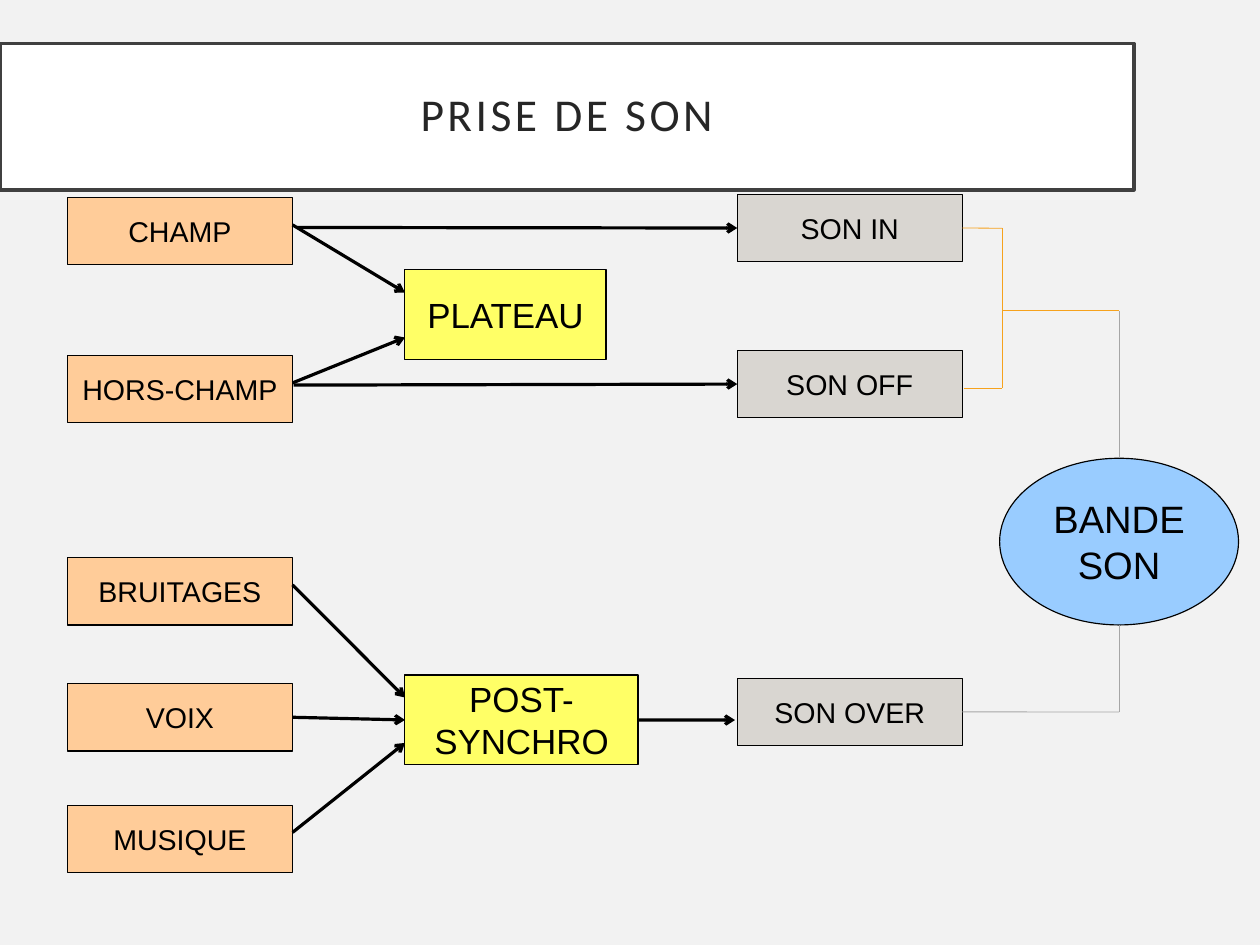
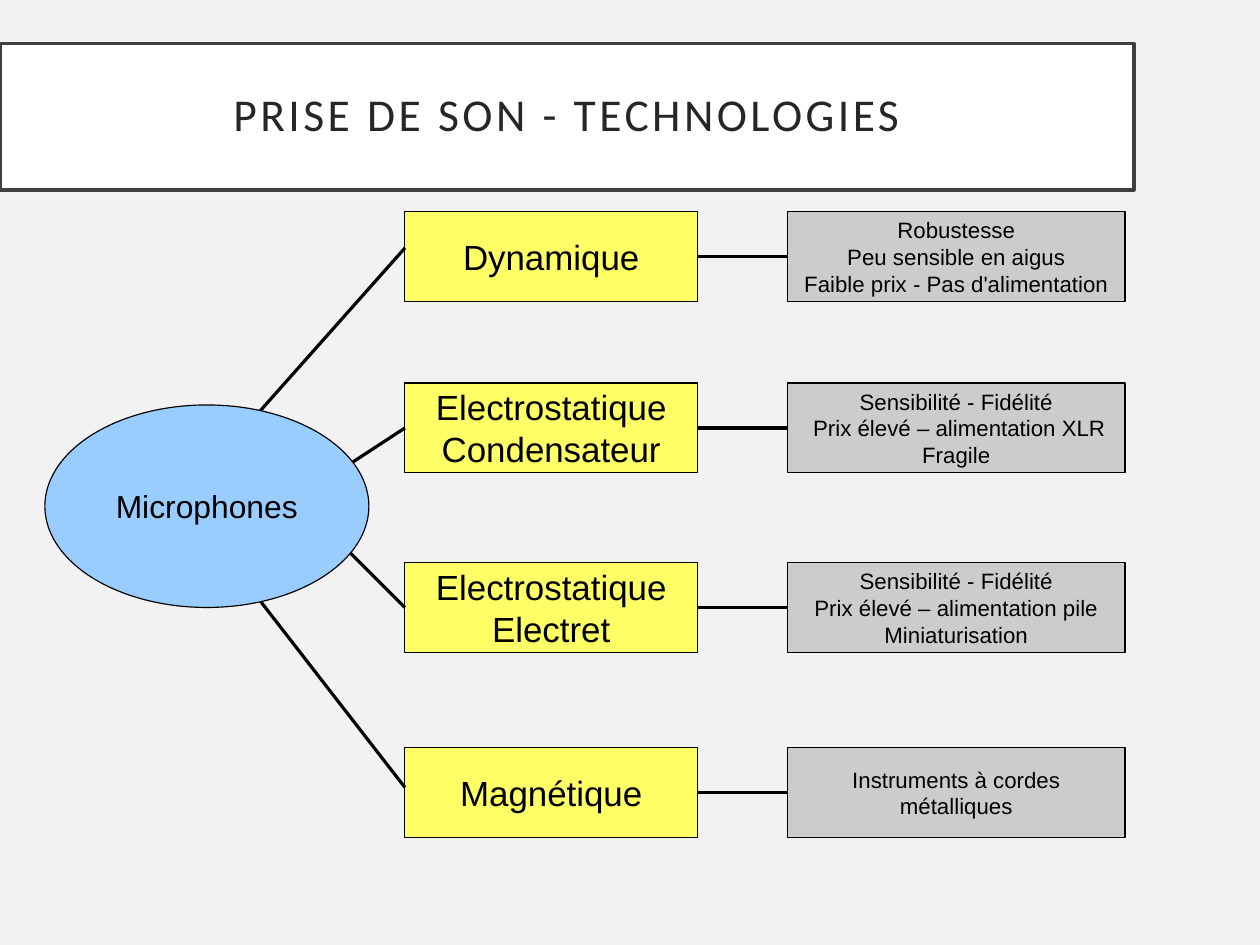
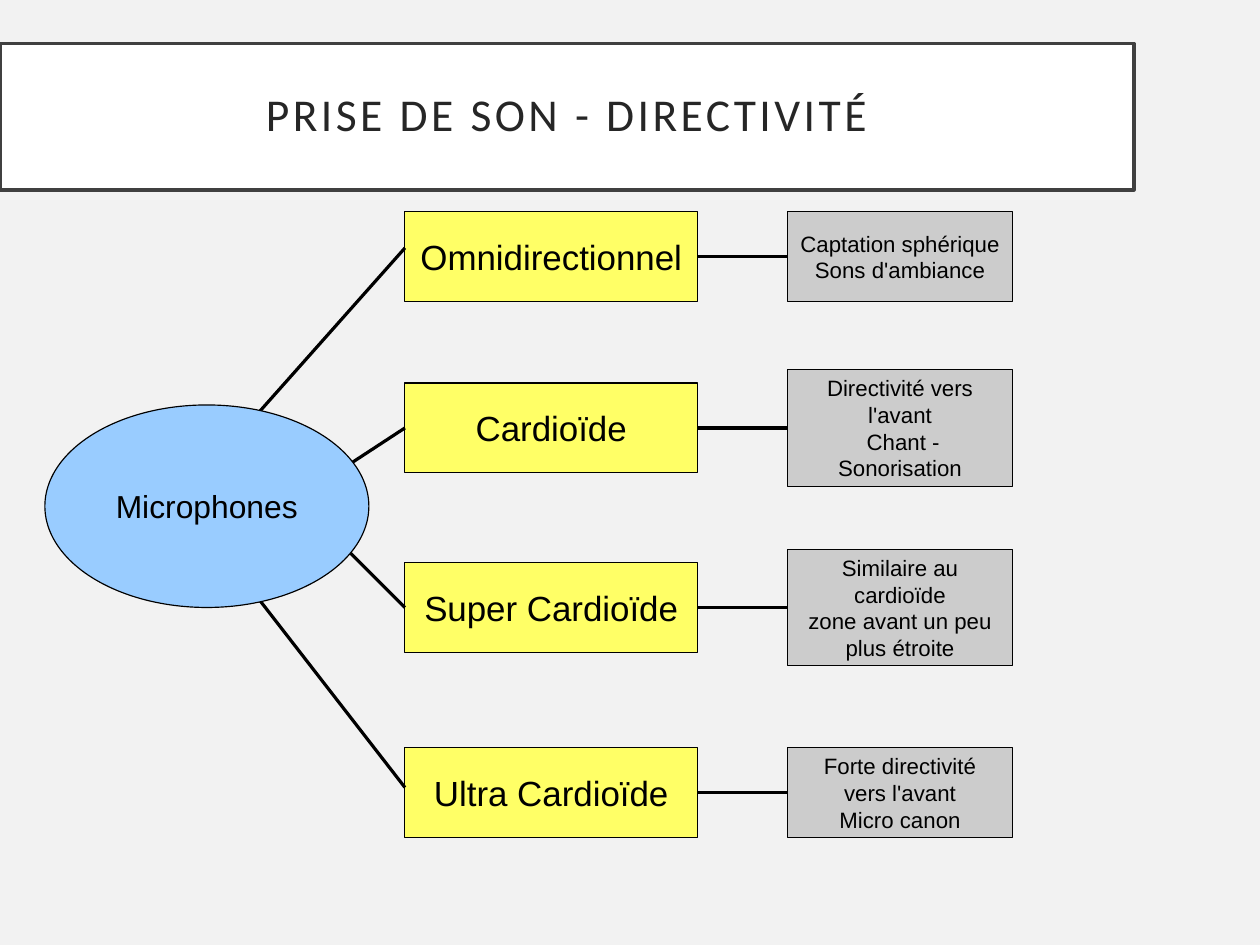
from dataclasses import dataclass
from typing import NamedTuple

from lxml import etree
from pptx import Presentation
from pptx.dml.color import RGBColor
from pptx.enum.shapes import MSO_CONNECTOR, MSO_SHAPE
from pptx.enum.text import MSO_ANCHOR, PP_ALIGN
from pptx.oxml.ns import qn
from pptx.shapes.autoshape import Shape
from pptx.slide import Slide
from pptx.util import Pt

RECT, OVAL = MSO_SHAPE.RECTANGLE, MSO_SHAPE.OVAL
STRAIGHT = MSO_CONNECTOR.STRAIGHT
CENTER, MIDDLE = PP_ALIGN.CENTER, MSO_ANCHOR.MIDDLE
LEFT, RIGHT = 1, 3

COLORS = {
    "background": "F2F2F2",
    "white": "FFFFFF",
    "title_line": "404040",
    "title_text": "262626",
    "black": "000000",
    "blue": "99CCFF",
    "orange": "FFCC99",
    "yellow": "FFFF66",
    "warm_grey": "D9D6D1",
    "grey": "CCCCCC",
    "bracket": "F6A21D",
    "link": "A6A6A6",
}


@dataclass(frozen=True)
class Style:
    fill: str
    size: float
    font: str = "Arial"
    color: str = "black"
    line: str = "black"
    line_width: float = 0
    inset_x: float = 7.2
    inset_y: float = 3.6


TITLE = Style("white", 28.7, "Calibri", "title_text", "title_line", 2.5, 14.4, 14.4)
SOURCE = Style("orange", 18)
STAGE = Style("yellow", 22)
SOUND = Style("warm_grey", 18)
DETAIL = Style("grey", 14)
SOUNDTRACK = Style("blue", 24)
MICROPHONES = Style("blue", 20)


class Frame(NamedTuple):
    x: float
    y: float
    w: float
    h: float


class Point(NamedTuple):
    x: float
    y: float


class Joint(NamedTuple):
    """Middle of one side of a shape."""
    shape: Shape
    side: int


class Row(NamedTuple):
    kind: str
    detail: str
    detail_height: float = 56.7


End = Point | Joint

COLUMN_SOURCE, COLUMN_STAGE, COLUMN_SOUND, COLUMN_DETAIL = 42.5, 255.1, 464.4, 496.1
SMALL_W, SMALL_H, STAGE_W, STAGE_H = 141.8, 42.5, 184.3, 56.7
SOURCE_RIGHT = COLUMN_SOURCE + SMALL_W
ROW_CENTERS = (161.6, 269.6, 382.7, 499.3)
FAN_STARTS = (Point(141.8, 283.7), Point(212.6, 297.4),
              Point(212.6, 340.2), Point(156.2, 368.6))
FAN_ENDS = {0: Point(COLUMN_STAGE, 156.2), 3: Point(COLUMN_STAGE, 496.1)}

TECHNOLOGIES = (
    Row("Dynamique",
        "Robustesse\nPeu sensible en aigus\nFaible prix - Pas d'alimentation"),
    Row("Electrostatique\nCondensateur",
        "Sensibilité - Fidélité\n Prix élevé – alimentation XLR\nFragile"),
    Row("Electrostatique\nElectret",
        "Sensibilité - Fidélité\nPrix élevé – alimentation pile\nMiniaturisation"),
    Row("Magnétique", "Instruments à cordes métalliques"),
)
DIRECTIVITY = (
    Row("Omnidirectionnel", "Captation sphérique\nSons d'ambiance"),
    Row("Cardioïde", "Directivité vers l'avant\n Chant - Sonorisation", 73.4),
    Row("Super Cardioïde",
        "Similaire au cardioïde\nzone avant un peu\nplus étroite", 73.4),
    Row("Ultra Cardioïde", "Forte directivité\nvers l'avant\nMicro canon"),
)


def rgb(name: str) -> RGBColor:
    return RGBColor.from_string(COLORS[name])


def add_box(slide: Slide, text: str, frame: Frame, style: Style,
            preset: MSO_SHAPE = RECT) -> Shape:
    sp = slide.shapes.add_shape(preset, *map(Pt, frame))
    sp.shadow.inherit = False
    sp.fill.solid()
    sp.fill.fore_color.rgb = rgb(style.fill)
    sp.line.color.rgb = rgb(style.line)
    sp.line.width = Pt(style.line_width)
    tf = sp.text_frame
    tf.word_wrap = True
    tf.vertical_anchor = MIDDLE
    tf.margin_left = tf.margin_right = Pt(style.inset_x)
    tf.margin_top = tf.margin_bottom = Pt(style.inset_y)
    tf.text = text
    for p in tf.paragraphs:
        p.alignment = CENTER
        for r in p.runs:
            r.font.name = style.font
            r.font.size = Pt(style.size)
            r.font.color.rgb = rgb(style.color)
    return sp


def add_line(slide: Slide, start: End, end: End, color: str = "black",
             width: float = 0, arrow: bool = False) -> None:
    """Draw a straight connector, joined to a shape at each end that is a Joint."""
    cxn = slide.shapes.add_connector(STRAIGHT, 0, 0, 0, 0)
    if isinstance(start, Joint):
        cxn.begin_connect(*start)
    else:
        cxn.begin_x, cxn.begin_y = map(Pt, start)
    if isinstance(end, Joint):
        cxn.end_connect(*end)
    else:
        cxn.end_x, cxn.end_y = map(Pt, end)
    cxn.line.color.rgb = rgb(color)
    cxn.line.width = Pt(width)
    if arrow:
        ln = cxn.line._get_or_add_ln()
        etree.SubElement(ln, qn("a:tailEnd"), type="arrow")
    etree.SubElement(cxn._element.spPr, qn("a:effectLst"))


def add_titled_slide(prs: Presentation, title: str) -> Slide:
    slide = prs.slides.add_slide(prs.slide_layouts[6])
    sp = add_box(slide, title, Frame(0, 27.4, 714.2, 92.2), TITLE)
    p = sp.text_frame.paragraphs[0]
    p.line_spacing = 0.9
    p.runs[0]._r.get_or_add_rPr().set("spc", "220")
    return slide


def add_recording_slide(prs: Presentation) -> None:
    slide = add_titled_slide(prs, "PRISE DE SON")

    def small_boxes(x: float, style: Style, tops: dict[str, float]) -> dict[str, Shape]:
        return {text: add_box(slide, text, Frame(x, y, SMALL_W, SMALL_H), style)
                for text, y in tops.items()}

    sources = small_boxes(COLUMN_SOURCE, SOURCE, {
        "CHAMP": 124.4, "HORS-CHAMP": 223.7, "BRUITAGES": 351.2,
        "VOIX": 430.6, "MUSIQUE": 507.4})
    sounds = small_boxes(COLUMN_SOUND, SOUND, {
        "SON IN": 122.4, "SON OFF": 220.7, "SON OVER": 427.2})
    add_box(slide, "PLATEAU", Frame(COLUMN_STAGE, 169.8, 126.7, STAGE_H), STAGE)
    post = add_box(slide, "POST-SYNCHRO",
                   Frame(COLUMN_STAGE, 425.2, 146.9, STAGE_H), STAGE)
    add_box(slide, "BANDE SON", Frame(629.7, 288.7, 150.5, 105), SOUNDTRACK, OVAL)

    arrows = (
        (Point(SOURCE_RIGHT, 141.7), Point(COLUMN_STAGE, 184.3)),
        (Point(SOURCE_RIGHT, 241.2), Point(COLUMN_STAGE, 212.6)),
        (Point(SOURCE_RIGHT, 368.5), Point(COLUMN_STAGE, 439.4)),
        (Joint(sources["VOIX"], RIGHT), Joint(post, LEFT)),
        (Point(SOURCE_RIGHT, 524.4), Point(COLUMN_STAGE, 468)),
        (Joint(post, RIGHT), Point(463, 453.6)),
        (Point(187.2, 143.3), Joint(sounds["SON IN"], LEFT)),
        (Point(185, 242.6), Joint(sounds["SON OFF"], LEFT)),
    )
    for start, end in arrows:
        add_line(slide, start, end, arrow=True)

    bracket_x, track_x = 631.4, 704.9
    top, middle, bottom, over = 143.8, 195.8, 244.6, 448.5
    links = (
        (Joint(sounds["SON IN"], RIGHT), Point(bracket_x, top), "bracket"),
        (Point(607, bottom), Point(bracket_x, bottom), "bracket"),
        (Point(bracket_x, top), Point(bracket_x, bottom), "bracket"),
        (Point(bracket_x, middle), Point(track_x, middle), "bracket"),
        (Point(track_x, middle), Point(track_x, 288.7), "link"),
        (Joint(sounds["SON OVER"], RIGHT), Point(track_x, over), "link"),
        (Point(track_x, 393.7), Point(track_x, over), "link"),
    )
    for start, end, color in links:
        add_line(slide, start, end, color, 0.5)


def add_microphone_slide(prs: Presentation, title: str, rows: tuple[Row, ...],
                         detail_width: float) -> None:
    """Fan out from the microphones to four kinds, each with its details."""
    slide = add_titled_slide(prs, title)
    for i, (row, center, start) in enumerate(zip(rows, ROW_CENTERS, FAN_STARTS)):
        kind = add_box(slide, row.kind, Frame(
            COLUMN_STAGE, center - STAGE_H / 2, STAGE_W, STAGE_H), STAGE)
        detail = add_box(slide, row.detail, Frame(
            COLUMN_DETAIL, center - row.detail_height / 2,
            detail_width, row.detail_height), DETAIL)
        add_line(slide, start, FAN_ENDS.get(i, Joint(kind, LEFT)))
        add_line(slide, Joint(kind, RIGHT), Joint(detail, LEFT))
    add_box(slide, "Microphones", Frame(28.3, 255.1, 204.1, 127.6), MICROPHONES, OVAL)


def main() -> None:
    prs = Presentation()
    prs.slide_width, prs.slide_height = Pt(793.7), Pt(595.3)
    fill = prs.slide_master.background.fill
    fill.solid()
    fill.fore_color.rgb = rgb("background")
    add_recording_slide(prs)
    add_microphone_slide(prs, "PRISE DE SON - TECHNOLOGIES", TECHNOLOGIES, 212.6)
    add_microphone_slide(prs, "PRISE DE SON - DIRECTIVITÉ", DIRECTIVITY, SMALL_W)
    prs.save("out.pptx")


if __name__ == "__main__":
    main()
